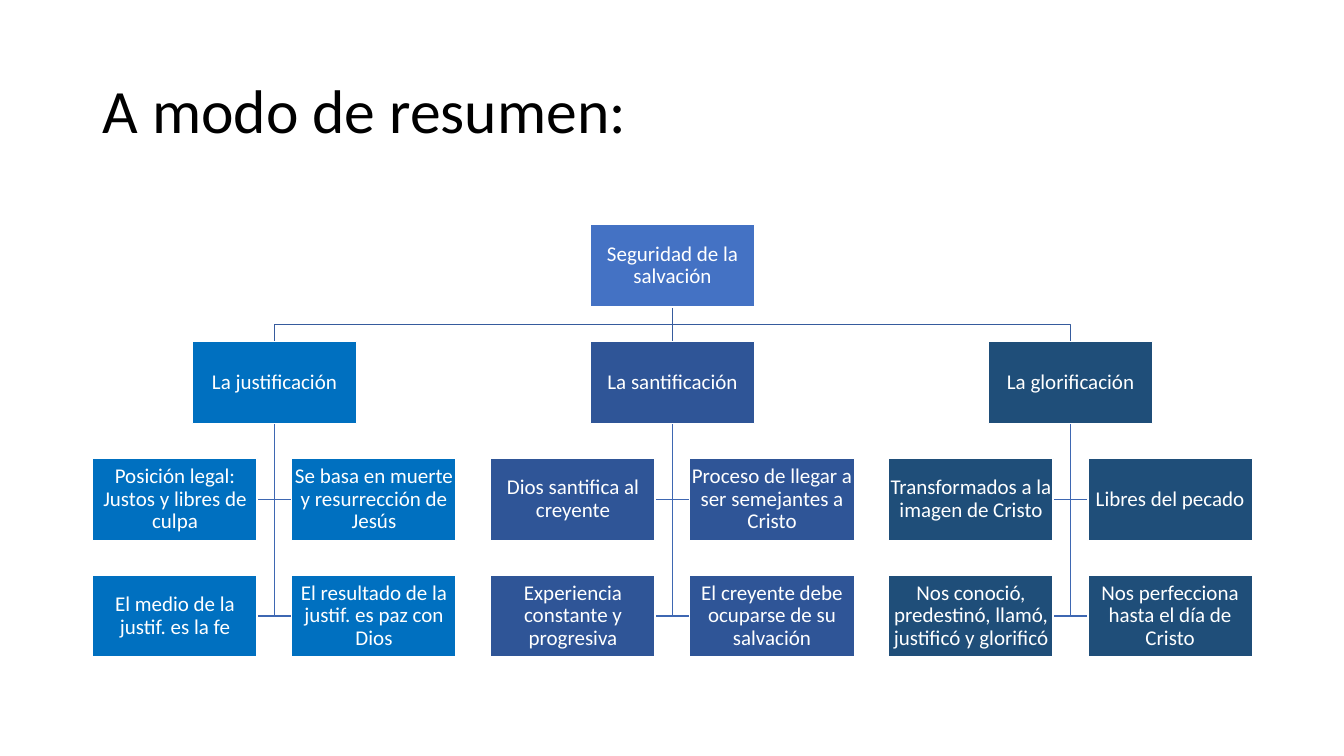
from lxml.etree import SubElement
from pptx import Presentation
from pptx.dml.color import RGBColor
from pptx.enum.shapes import MSO_CONNECTOR, MSO_SHAPE
from pptx.enum.text import MSO_ANCHOR, PP_ALIGN
from pptx.oxml.ns import qn
from pptx.util import Inches, Pt

THEME = {
    "font": "Calibri", "title_size": 44, "box_size": 15,
    "title": "000000", "white": "FFFFFF", "root": "4472C4",
    "root_line": "365B9D", "branch_line": "3E67B2",
}
# Six boxes and five gaps fill the width; a gap is 0.21 of a box
LEFT, TOP, WIDTH = 0.92, 2.23, 11.5
BOX_W = WIDTH / (6 + 5 * 0.21)
BOX_H, GAP = BOX_W / 2, BOX_W * 0.21
STEP_X, STEP_Y = BOX_W + GAP, BOX_H + GAP

# Branch: colour, heading, rows of left and right details
BRANCHES = [
    ("0070C0", "La justificación", [
        ("Posición legal: Justos y libres de culpa", "Se basa en muerte y resurrección de Jesús"),
        ("El medio de la justif. es la fe", "El resultado de la justif. es paz con Dios")]),
    ("2F5597", "La santificación", [
        ("Dios santifica al creyente", "Proceso de llegar a ser semejantes a Cristo"),
        ("Experiencia constante y progresiva", "El creyente debe ocuparse de su salvación")]),
    ("1F4E79", "La glorificación", [
        ("Transformados a la imagen de Cristo", "Libres del pecado"),
        ("Nos conoció, predestinó, llamó, justificó y glorificó",
         "Nos perfecciona hasta el día de Cristo")]),
]

prs = Presentation()
prs.slide_width, prs.slide_height = Inches(13.33), Inches(7.5)
s = prs.slides.add_slide(prs.slide_layouts[6])


def add_box(text, column, row, fill):
    sp = s.shapes.add_shape(
        MSO_SHAPE.RECTANGLE, Inches(LEFT + column * STEP_X), Inches(TOP + row * STEP_Y),
        Inches(BOX_W), Inches(BOX_H))
    sp.shadow.inherit = False
    sp.fill.solid()
    sp.fill.fore_color.rgb = RGBColor.from_string(fill)
    sp.line.color.rgb = RGBColor.from_string(THEME["white"])
    sp.line.width = Pt(1)
    tf = sp.text_frame
    margins = dict.fromkeys(
        ("margin_left", "margin_top", "margin_right", "margin_bottom"), Inches(0.01))
    frame = {"word_wrap": True, "vertical_anchor": MSO_ANCHOR.MIDDLE, **margins}
    for name, value in frame.items():
        setattr(tf, name, value)
    p = tf.paragraphs[0]
    p.alignment, p.line_spacing = PP_ALIGN.CENTER, 0.9
    r = p.add_run()
    r.text = text
    r.font.name, r.font.size = THEME["font"], Pt(THEME["box_size"])
    r.font.color.rgb = RGBColor.from_string(THEME["white"])
    return sp


def add_elbow(points, color):
    builder = s.shapes.build_freeform(*points[0])
    builder.add_line_segments(points[1:], close=False)
    elbow = builder.convert_to_shape()
    elbow.shadow.inherit = False
    elbow.fill.background()
    elbow.line.color.rgb = RGBColor.from_string(color)
    elbow.line.width = Pt(1)
    s.shapes._spTree.insert(3, elbow._element)  # behind the boxes


# Title
title = s.shapes.add_textbox(Inches(0.92), Inches(0.4), Inches(11.5), Inches(1.45))
tf = title.text_frame
tf.word_wrap, tf.vertical_anchor = True, MSO_ANCHOR.MIDDLE
p = tf.paragraphs[0]
p.line_spacing = 0.9
r = p.add_run()
r.text = "A modo de resumen:"
r.font.name, r.font.size = THEME["font"], Pt(THEME["title_size"])
r.font.color.rgb = RGBColor.from_string(THEME["title"])

# Root
root = add_box("Seguridad de la salvación", 2.5, 0, THEME["root"])
root_x = root.left + root.width // 2
root_bottom = root.top + root.height
bar_y = root_bottom + Inches(GAP / 2)

for index, (color, heading, rows) in enumerate(BRANCHES):
    # Heading and its link to the root
    column = 2 * index
    head = add_box(heading, column + 0.5, 1, color)
    x, head_bottom = head.left + head.width // 2, head.top + head.height
    if head.left == root.left:
        stem = s.shapes.add_connector(
            MSO_CONNECTOR.STRAIGHT, root_x, root_bottom, x, head.top)
        stem.begin_connect(root, 2)
        stem.end_connect(head, 0)
        stem.line.color.rgb = RGBColor.from_string(THEME["root_line"])
        stem.line.width = Pt(1)
        SubElement(stem._element.spPr, qn("a:effectLst"))
        s.shapes._spTree.insert(3, stem._element)
    else:
        add_elbow([(root_x, root_bottom), (root_x, bar_y), (x, bar_y), (x, head.top)],
                  THEME["root_line"])

    # Details in pairs, each joined to the heading
    for row, (left_text, right_text) in enumerate(rows, 2):
        left = add_box(left_text, column, row, color)
        right = add_box(right_text, column + 1, row, color)
        y = left.top + left.height // 2
        for side_x in (left.left + left.width, right.left):
            add_elbow([(x, head_bottom), (x, y), (side_x, y)], THEME["branch_line"])

prs.save("out.pptx")
